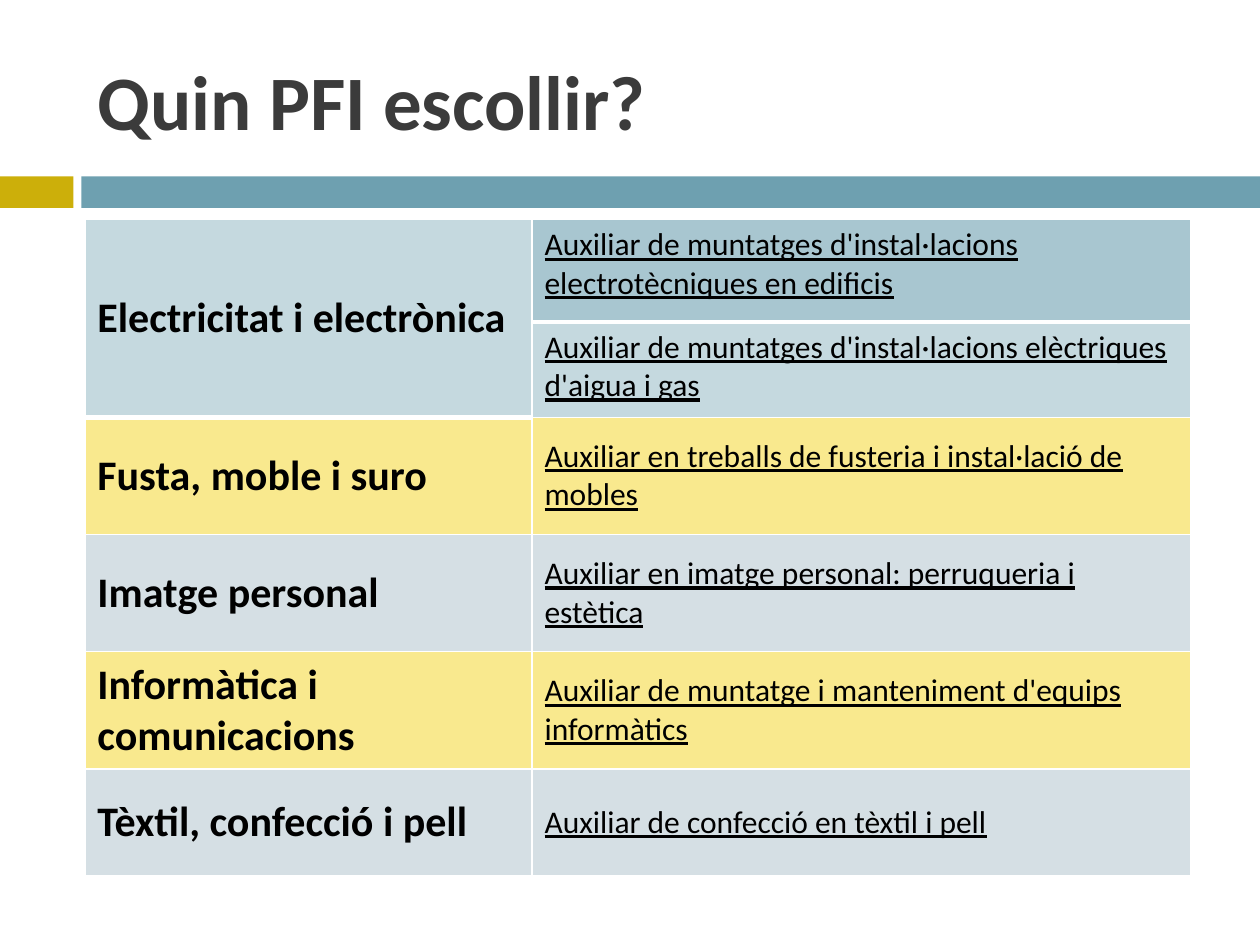
from pptx import Presentation
from pptx.dml.color import RGBColor
from pptx.enum.shapes import MSO_SHAPE as Shape
from pptx.enum.text import MSO_ANCHOR as Anchor, PP_ALIGN as Align
from pptx.util import Pt
from lxml.etree import SubElement
from pptx.oxml.ns import qn

FONT = "Calibri"
BLACK = RGBColor(0, 0, 0)
CHARCOAL = RGBColor(0x3B, 0x3B, 0x3B)
GOLD = RGBColor(0xCC, 0xAF, 0x0A)
TEAL = RGBColor(0x6E, 0xA0, 0xB0)
MID_BLUE = RGBColor(0xA8, 0xC6, 0xD0)
PALE_BLUE = RGBColor(0xC5, 0xD9, 0xDF)
YELLOW = RGBColor(0xF9, 0xE9, 0x8E)
GREY = RGBColor(0xD5, 0xDF, 0xE4)


def add_span(para, text, size, color, bold=False, underline=False):
    span = para.add_run()
    span.text = text
    span.font.name = FONT
    span.font.size = Pt(size)
    span.font.color.rgb = color
    span.font.bold = bold
    span.font.underline = underline


def style_cell(cell, fill, top=1, bottom=1):
    """White borders first, then the fill, as the schema orders them."""
    props = cell._tc.get_or_add_tcPr()
    for side, width in (("L", 1), ("R", 1), ("T", top), ("B", bottom)):
        line = SubElement(props, qn(f"a:ln{side}"), w=str(Pt(width)))
        SubElement(SubElement(line, qn("a:solidFill")), qn("a:srgbClr"), val="FFFFFF")
    cell.fill.solid()
    cell.fill.fore_color.rgb = fill


deck = Presentation()
deck.slide_width, deck.slide_height = Pt(720), Pt(540)
page = deck.slides.add_slide(deck.slide_layouts[5])

# Two-part band under the title
for left, width, color in ((0, 42, GOLD), (46.5, 673.5, TEAL)):
    band = page.shapes.add_shape(Shape.RECTANGLE, Pt(left), Pt(100.8), Pt(width), Pt(18))
    band.shadow.inherit = False
    band.fill.solid()
    band.fill.fore_color.rgb = color
    band.line.fill.background()

# Title
title = page.shapes.title
title.left, title.top, title.width, title.height = Pt(48.5), Pt(18), Pt(642), Pt(78)
title.text_frame.vertical_anchor = Anchor.MIDDLE
para = title.text_frame.paragraphs[0]
para.alignment = Align.LEFT
add_span(para, "Quin PFI escollir?", 44, CHARCOAL, bold=True)

# Table of fields and programmes: field, programme, field fill, programme fill
rows = [
    ("Electricitat i electrònica",
     "Auxiliar de muntatges d'instal·lacions electrotècniques en edificis", PALE_BLUE, MID_BLUE),
    ("", "Auxiliar de muntatges d'instal·lacions elèctriques d'aigua i gas", PALE_BLUE, PALE_BLUE),
    ("Fusta, moble i suro",
     "Auxiliar en treballs de fusteria i instal·lació de mobles", YELLOW, YELLOW),
    ("Imatge personal", "Auxiliar en imatge personal: perruqueria i estètica", GREY, GREY),
    ("Informàtica i comunicacions",
     "Auxiliar de muntatge i manteniment d'equips informàtics", YELLOW, YELLOW),
    ("Tèxtil, confecció i pell", "Auxiliar de confecció en tèxtil i pell", GREY, GREY),
]
row_heights = (58.5, 54.5, 67, 67, 67, 61)
table = page.shapes.add_table(len(rows), 2, Pt(48.5), Pt(125.5), Pt(632), Pt(375)).table
table.first_row = table.horz_banding = False
table.columns[0].width, table.columns[1].width = Pt(255.5), Pt(376.5)
table.cell(0, 0).merge(table.cell(1, 0))

for index, (field, programme, field_fill, programme_fill) in enumerate(rows):
    table.rows[index].height = Pt(row_heights[index])
    field_cell, programme_cell = table.cell(index, 0), table.cell(index, 1)

    # Thick rules: below the merged field, and below the first programme
    style_cell(field_cell, field_fill, top=3 if index == 2 else 1, bottom=3 if index < 2 else 1)
    style_cell(programme_cell, programme_fill,
               top=3 if index == 1 else 1, bottom=3 if index == 0 else 1)

    if field:
        field_cell.vertical_anchor = Anchor.MIDDLE
        add_span(field_cell.text_frame.paragraphs[0], field, 24, BLACK, bold=True)
    programme_cell.vertical_anchor = Anchor.TOP if index < 2 else Anchor.MIDDLE
    add_span(programme_cell.text_frame.paragraphs[0], programme, 18, BLACK, underline=True)

deck.save("out.pptx")
